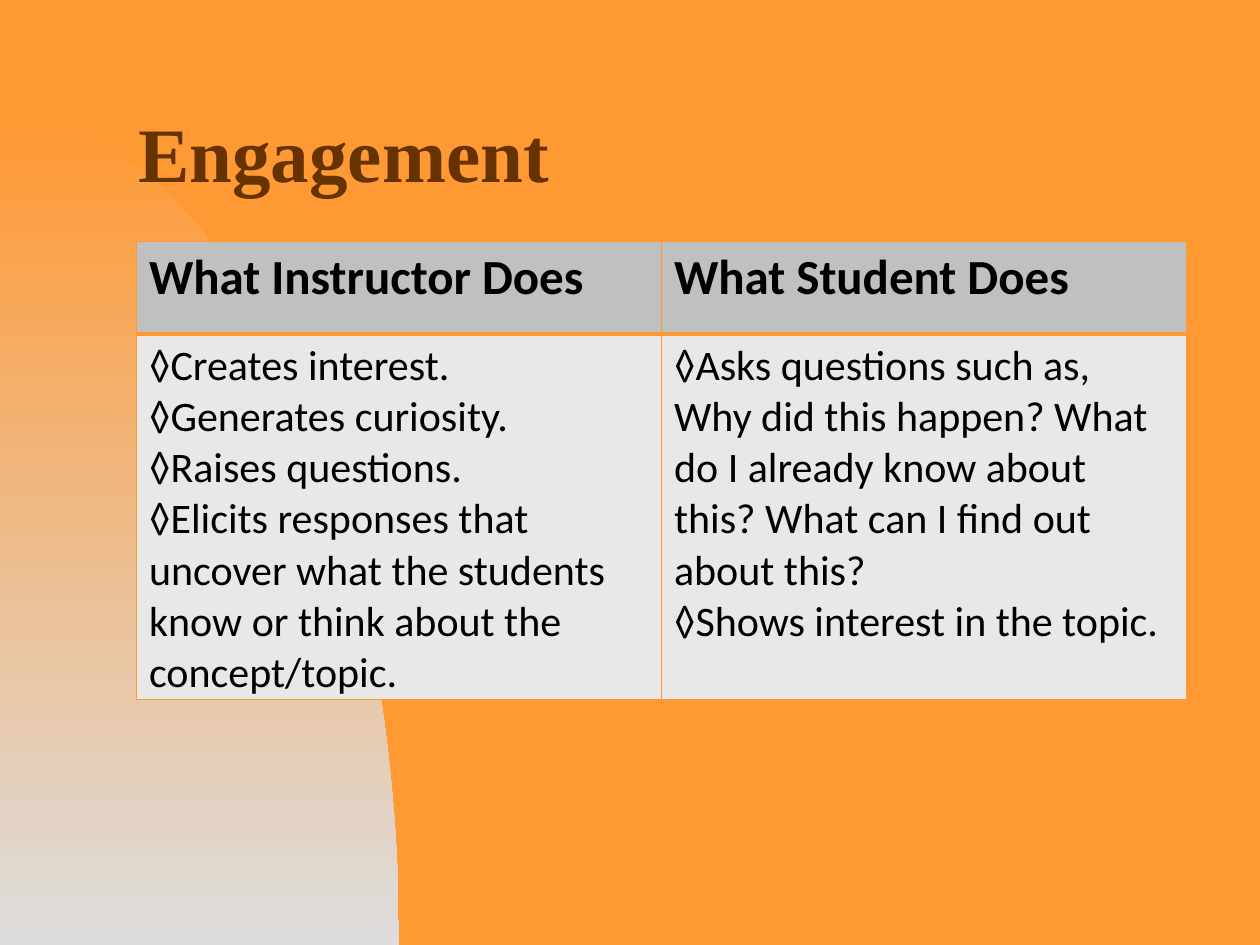
import dataclasses

import lxml.etree
import pptx
import pptx.dml.color
import pptx.enum.text
import pptx.oxml.ns
import pptx.util

UNIT = pptx.util.Inches(1) / 12  # the slide is a grid of 120 columns, 90 rows


@dataclasses.dataclass(frozen=True)
class Theme:
    back: str = "FF9933"
    fade: str = "DDDDDD"
    title: str = "663300"
    text: str = "000000"
    head: str = "C0C0C0"
    body: str = "E8E8E8"
    serif: str = "Times New Roman"
    sans: str = "Calibri"
    title_size: int = 44
    head_size: int = 28
    body_size: int = 24
    thin: int = 1
    thick: int = 3


THEME = Theme()
TABLE = [
    [["What Instructor Does"], ["What Student Does"]],
    [
        ["◊Creates interest.", "◊Generates curiosity.", "◊Raises questions.",
         "◊Elicits responses that uncover what the students know or think "
         "about the concept/topic."],
        ["◊Asks questions such as, Why did this happen? What do I already "
         "know about this? What can I find out about this?",
         "◊Shows interest in the topic."],
    ],
]


def grid(*cells):
    return [pptx.util.Emu(round(n * UNIT)) for n in cells]


def color(code):
    return pptx.dml.color.RGBColor.from_string(code)


def style(para, name, size, code, bold):
    font = para.font
    font.name, font.size, font.bold = name, pptx.util.Pt(size), bold
    font.color.rgb = color(code)


def draw_curve(slide, box, steps=60):
    """Fill the area under a quarter arc, fading from top to bottom."""
    left, top, width, height = grid(*box)
    points = []
    for step in range(steps + 1):
        t = step / steps
        # Cubic curve whose handles lie 55% along the top and right sides
        across = 3 * t * (1 - t) ** 2 * 0.55 + 3 * t * t * (1 - t) + t ** 3
        down = 3 * t * t * (1 - t) * 0.45 + t ** 3
        points.append((left + width * across, top + height * down))
    build = slide.shapes.build_freeform(*map(round, points[0]))
    build.add_line_segments(points[1:] + [(left, top + height)])
    shape = build.convert_to_shape()
    shape.shadow.inherit = False
    shape.line.fill.background()
    shape.fill.gradient()
    shape.fill.gradient_angle = 270
    for stop, code in zip(shape.fill.gradient_stops, (THEME.back, THEME.fade)):
        stop.color.rgb = color(code)


def draw_title(slide, box, text):
    frame = slide.shapes.add_textbox(*grid(*box)).text_frame
    frame.word_wrap = True
    frame.vertical_anchor = pptx.enum.text.MSO_ANCHOR.MIDDLE
    para = frame.paragraphs[0]
    para.text = text
    para.line_spacing = 0.7
    style(para, THEME.serif, THEME.title_size, THEME.title, True)


def add_edge(cell, side, width):
    props = cell._tc.get_or_add_tcPr()
    tag = pptx.oxml.ns.qn
    line = lxml.etree.SubElement(props, tag("a:ln" + side),
                                 w=str(pptx.util.Pt(width)))
    fill = lxml.etree.SubElement(line, tag("a:solidFill"))
    lxml.etree.SubElement(fill, tag("a:srgbClr"), val=THEME.back)


def fill_cell(cell, lines, row):
    head = row == 0
    for side in "LRTB":
        joint = side == ("B" if head else "T")
        add_edge(cell, side, THEME.thick if joint else THEME.thin)
    cell.fill.solid()
    cell.fill.fore_color.rgb = color(THEME.head if head else THEME.body)
    cell.text = "\n".join(lines)
    size = THEME.head_size if head else THEME.body_size
    for para in cell.text_frame.paragraphs:
        style(para, THEME.sans, size, THEME.text, head)


def draw_table(slide, box, data, head):
    """Lay out the table; head is the share of the height for the first row."""
    place = grid(*box)
    table = slide.shapes.add_table(len(data), len(data[0]), *place).table
    for row, share in zip(table.rows, (head, 1 - head)):
        row.height = round(place[3] * share)
    for r, row in enumerate(data):
        for c, lines in enumerate(row):
            fill_cell(table.cell(r, c), lines, r)


def main():
    deck = pptx.Presentation()
    deck.slide_width, deck.slide_height = grid(120, 90)
    slide = deck.slides.add_slide(deck.slide_layouts[6])
    slide.background.fill.solid()
    slide.background.fill.fore_color.rgb = color(THEME.back)
    draw_curve(slide, (0, 11, 38, 79))
    draw_title(slide, (12, 8, 104, 15), "Engagement")
    draw_table(slide, (13, 23, 100, 42), TABLE, head=0.21)
    deck.save("out.pptx")


if __name__ == "__main__":
    main()
